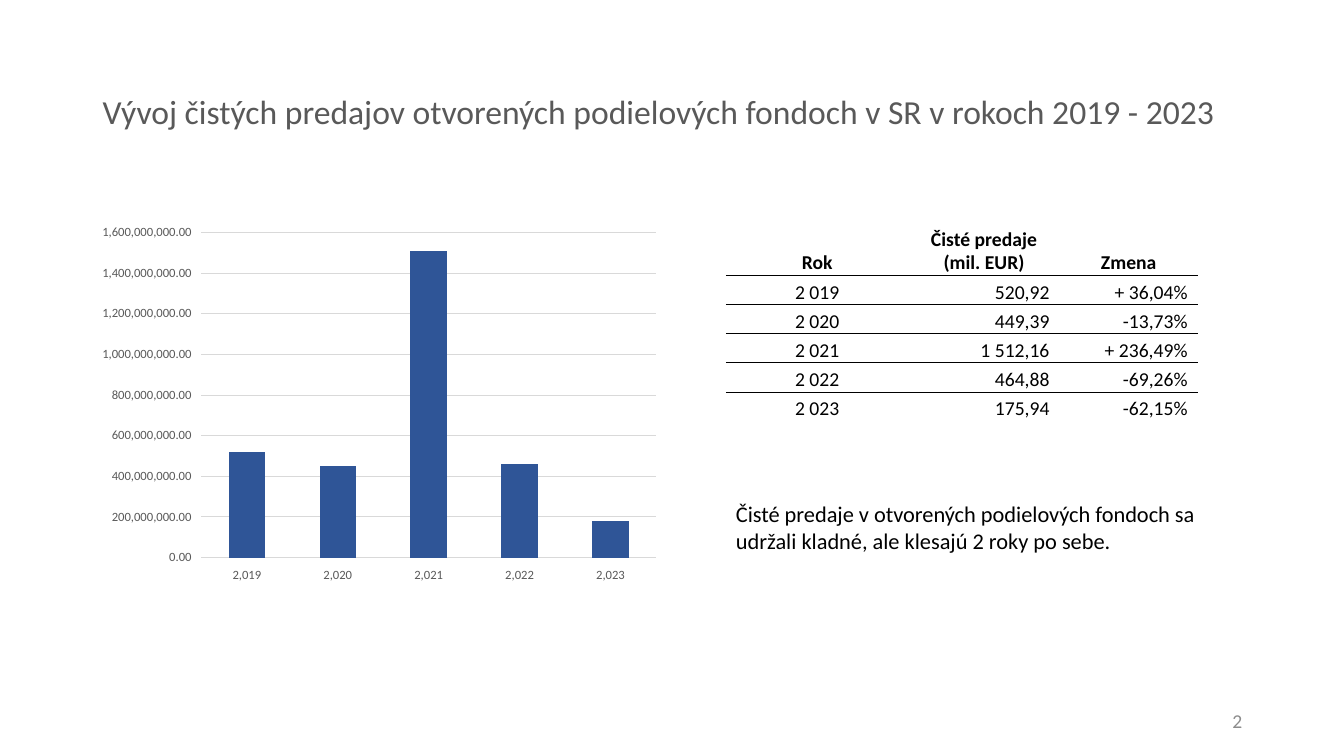
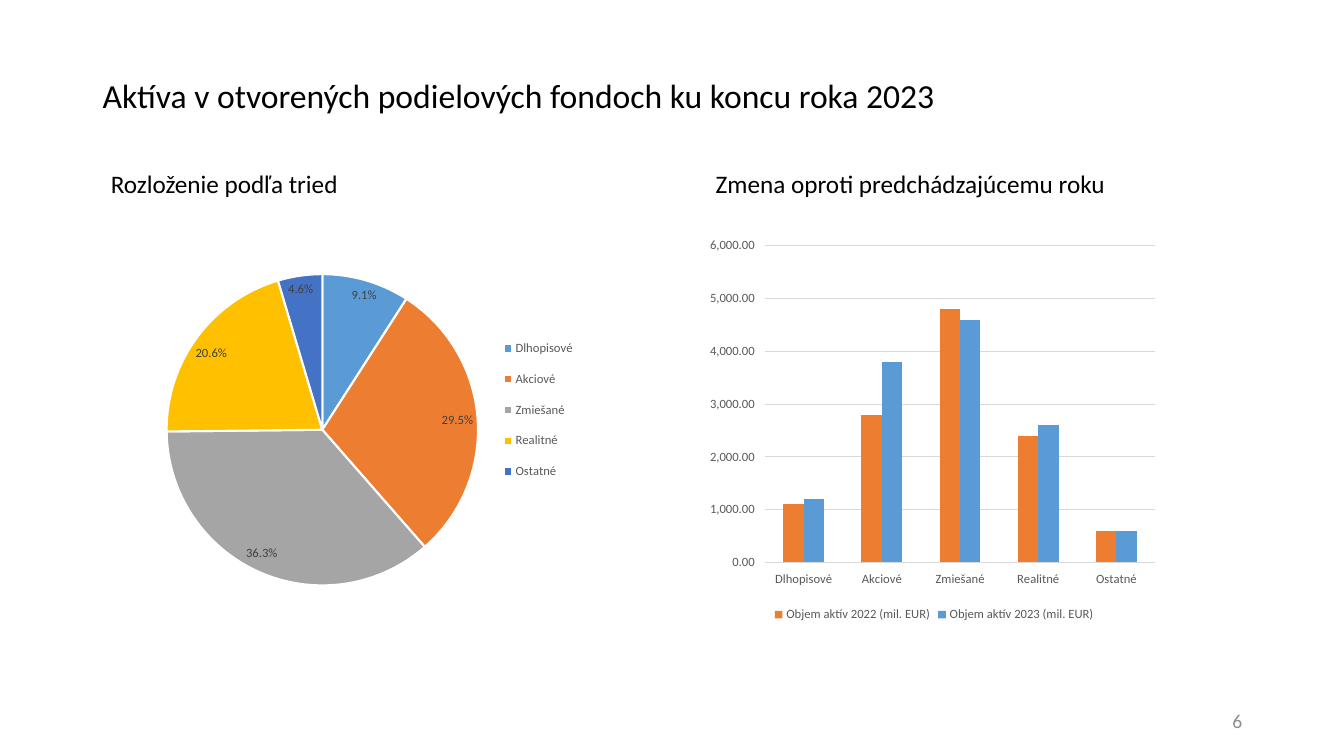
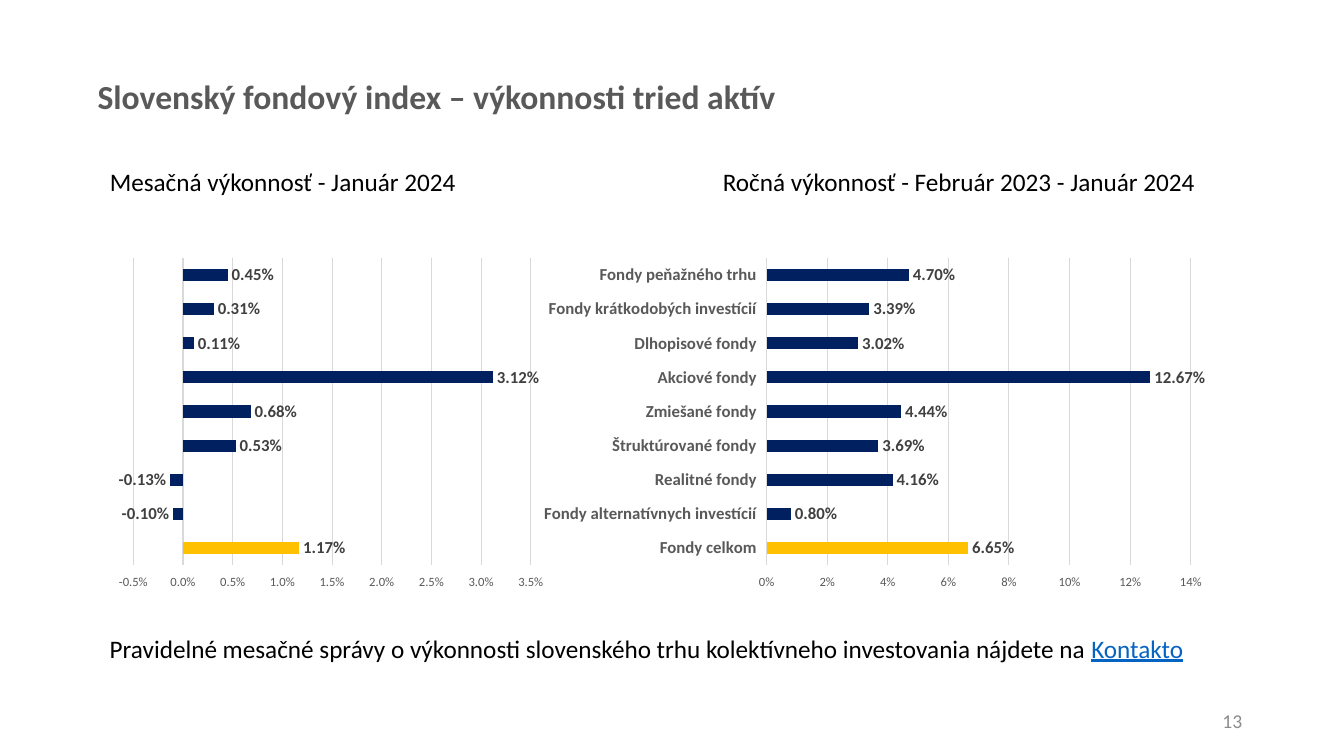
from pptx import Presentation
from pptx.chart.data import CategoryChartData
from pptx.dml.color import RGBColor
from pptx.enum.chart import (XL_CHART_TYPE, XL_LABEL_POSITION, XL_LEGEND_POSITION,
                             XL_TICK_LABEL_POSITION, XL_TICK_MARK)
from pptx.enum.text import MSO_ANCHOR, PP_ALIGN
from pptx.oxml import parse_xml
from pptx.oxml.ns import nsdecls, qn
from pptx.util import Inches, Pt

COLUMN, BAR, PIE = (XL_CHART_TYPE.COLUMN_CLUSTERED, XL_CHART_TYPE.BAR_CLUSTERED,
                    XL_CHART_TYPE.PIE)
OUT_END, BEST_FIT = XL_LABEL_POSITION.OUTSIDE_END, XL_LABEL_POSITION.BEST_FIT
LEGEND_BOTTOM, LEGEND_RIGHT = XL_LEGEND_POSITION.BOTTOM, XL_LEGEND_POSITION.RIGHT
LOW, NO_TICK = XL_TICK_LABEL_POSITION.LOW, XL_TICK_MARK.NONE
LEFT, CENTER, RIGHT = PP_ALIGN.LEFT, PP_ALIGN.CENTER, PP_ALIGN.RIGHT
TOP, MIDDLE, BOTTOM = MSO_ANCHOR.TOP, MSO_ANCHOR.MIDDLE, MSO_ANCHOR.BOTTOM

# Shared look
FONT = "Calibri"
COLORS = {
    "black": "000000", "white": "FFFFFF", "title": "595959", "axis": "595959",
    "label": "404040", "number": "8C8C8C", "grid": "D9D9D9", "link": "0563C1",
    "navy": "002060", "blue": "2F5597", "sky": "5B9BD5", "orange": "ED7D31",
    "gray": "A5A5A5", "gold": "FFC000", "royal": "4472C4",
}
TITLE = {"size": 24, "color": "title"}
HEADING = {"size": 18}
NO_STYLE = "{2D5ABB26-0587-4C30-8999-92F81FD0307C}"

# Content
CLASSES = ["Dlhopisové", "Akciové", "Zmiešané", "Realitné", "Ostatné"]
FUNDS = ["Fondy celkom", "Fondy alternatívnych investícií", "Realitné fondy",
         "Štruktúrované fondy", "Zmiešané fondy", "Akciové fondy", "Dlhopisové fondy",
         "Fondy krátkodobých investícií", "Fondy peňažného trhu"]
SALES_TABLE = {
    "at": (7.2, 2.16), "cols": [1.81, 1.5, 1.37], "head": 0.57, "row": 0.29,
    "rows": [("Rok", "Čisté predaje\n(mil. EUR)", "Zmena"),
             ("2 019", "520,92", "+ 36,04%"),
             ("2 020", "449,39", "-13,73%"),
             ("2 021", "1 512,16", "+ 236,49%"),
             ("2 022", "464,88", "-69,26%"),
             ("2 023", "175,94", "-62,15%")],
}
FUND_LABELS = {"pos": OUT_END, "fmt": "0.00%", "font": {"size": 12, "color": "label", "bold": True}}
FUND_BARS = {"type": BAR, "cats": FUNDS, "gap": 182, "points": ["gold"], "labels": FUND_LABELS}

SLIDES = [
    {"number": "2",
     "title": ("Vývoj čistých predajov otvorených podielových fondoch v SR v rokoch 2019 - 2023",
               (0.92, 0.4, 11.94, 1.45), TITLE),
     "texts": [([("Čisté predaje v otvorených podielových fondoch sa udržali kladné, "
                  "ale klesajú 2 roky po sebe.", {"size": 16})], (7.2, 4.91, 4.89, 0.64))],
     "table": SALES_TABLE,
     "charts": [
         {"type": COLUMN, "at": (0.9, 2.16, 5.72, 3.69), "gap": 150,
          "cats": ["2,019", "2,020", "2,021", "2,022", "2,023"],
          "series": [("Čisté predaje", "blue", [520e6, 450e6, 1510e6, 460e6, 180e6])],
          "scale": (0, 1.6e9, 2e8), "fmt": "#,##0.00"}]},
    {"number": "6",
     "title": ("Aktíva v otvorených podielových fondoch ku koncu roka 2023",
               (0.92, 0.4, 11.5, 1.14), {**TITLE, "color": "black"}),
     "texts": [([("Rozloženie podľa tried", HEADING)], (1, 1.62, 2.81, 0.4)),
               ([("Zmena oproti predchádzajúcemu roku", HEADING)], (7, 1.62, 4.54, 0.4))],
     "charts": [
         {"type": PIE, "at": (1.33, 2.28, 4.61, 3.93), "cats": CLASSES,
          "series": [("Podiel", "sky", [9.1, 29.5, 36.3, 20.6, 4.6])],
          "points": ["sky", "orange", "gray", "gold", "royal"],
          "labels": {"pos": BEST_FIT, "fmt": "0.0%", "font": {"size": 9, "color": "label"}},
          "plot": (0.07, 0.08, 0.67, 0.85),
          "legend": LEGEND_RIGHT, "legend_at": (0.77, 0.24, 0.2, 0.43)},
         {"type": COLUMN, "at": (6.93, 2.28, 4.67, 3.93), "cats": CLASSES, "gap": 182,
          "series": [("Objem aktív 2022 (mil. EUR)", "orange", [1100, 2800, 4800, 2400, 600]),
                     ("Objem aktív 2023 (mil. EUR)", "sky", [1200, 3800, 4600, 2600, 600])],
          "scale": (0, 6000, 1000), "fmt": "#,##0.00", "cat_line": True,
          "plot": (0.14, 0.04, 0.83, 0.8), "legend": LEGEND_BOTTOM}]},
    {"number": "13",
     "title": ("Slovenský fondový index – výkonnosti tried aktív",
               (0.87, 0.25, 11.94, 1.45), {**TITLE, "bold": True}),
     "texts": [([("Mesačná výkonnosť - Január 2024", HEADING)], (0.99, 1.6, 3.91, 0.4)),
               ([("Ročná výkonnosť - Február 2023 - Január 2024", HEADING)],
                (7.07, 1.6, 5.35, 0.4)),
               ([("Pravidelné mesačné správy o výkonnosti slovenského trhu kolektívneho "
                  "investovania nájdete na ", HEADING),
                 ("Kontakto", {**HEADING, "color": "link", "underline": True})],
                (0.99, 6.23, 12, 0.4))],
     "charts": [
         {**FUND_BARS, "at": (0.99, 2.25, 4.75, 3.86), "plot": (0.07, 0.08, 0.83, 0.79),
          "series": [("Mesačná výkonnosť", "navy", [0.0117, -0.001, -0.0013, 0.0053, 0.0068,
                                                    0.0312, 0.0011, 0.0031, 0.0045])],
          "scale": (-0.005, 0.035, 0.005), "fmt": "0.0%", "hide_cats": True},
         {**FUND_BARS, "at": (4.62, 2.25, 7.65, 3.86), "plot": (0.39, 0.08, 0.55, 0.79),
          "series": [("Ročná výkonnosť", "navy", [0.0665, 0.008, 0.0416, 0.0369, 0.0444,
                                                  0.1267, 0.0302, 0.0339, 0.047])],
          "scale": (0, 0.14, 0.02), "fmt": "0%", "cat_line": True,
          "cat_font": {"size": 12, "color": "axis", "bold": True}}]},
]


def rgb(name):
    return RGBColor.from_string(COLORS[name])


def set_font(font, size, color="black", **flags):
    font.color.rgb = rgb(color)
    for key, value in {"name": FONT, "size": Pt(size), "bold": False, **flags}.items():
        setattr(font, key, value)


def add_text(s, runs, at, align=LEFT, anchor=TOP, spacing=None):
    tf = s.shapes.add_textbox(*map(Inches, at)).text_frame
    tf.word_wrap = True
    tf.vertical_anchor = anchor
    p = tf.paragraphs[0]
    p.alignment = align
    p.line_spacing = spacing
    for text, style in runs:
        r = p.add_run()
        r.text = text
        set_font(r.font, **style)


def add_table(s, spec_table):
    rows, cols = spec_table["rows"], spec_table["cols"]
    heights = [spec_table["head"]] + [spec_table["row"]] * (len(rows) - 1)
    size = (sum(cols), sum(heights))
    table = s.shapes.add_table(len(rows), len(cols),
                               *map(Inches, spec_table["at"] + size)).table
    table.first_row = table.horz_banding = False
    table._tbl.tblPr.find(qn("a:tableStyleId")).text = NO_STYLE
    for column, width in zip(table.columns, cols):
        column.width = Inches(width)
    for i, (values, height) in enumerate(zip(rows, heights)):
        table.rows[i].height = Inches(height)
        for j, value in enumerate(values):
            cell = table.cell(i, j)
            number = i > 0 and j > 0
            cell.margin_left = cell.margin_top = cell.margin_bottom = 0
            cell.margin_right = Inches(0.1 if number else 0)
            cell.vertical_anchor = BOTTOM
            cell.text = value
            for p in cell.text_frame.paragraphs:
                p.alignment = RIGHT if number else CENTER
                set_font(p.runs[0].font, 14, bold=i == 0)
            # Rule under every row but the last
            if i < len(rows) - 1:
                cell._tc.get_or_add_tcPr().append(parse_xml(
                    f'<a:lnB {nsdecls("a")} w="6350"><a:solidFill>'
                    f'<a:srgbClr val="{COLORS["black"]}"/></a:solidFill></a:lnB>'))
            cell.fill.background()


def set_layout(parent, index, box, inner=False):
    for old in parent.findall(qn("c:layout")):
        parent.remove(old)
    parts = '<c:layoutTarget val="inner"/>' if inner else ""
    parts += '<c:xMode val="edge"/><c:yMode val="edge"/>'
    parts += "".join(f'<c:{key} val="{value}"/>' for key, value in zip("xywh", box))
    parent.insert(index, parse_xml(
        f'<c:layout {nsdecls("c")}><c:manualLayout>{parts}</c:manualLayout></c:layout>'))


def style_line(line, color=None):
    if color:
        line.color.rgb = rgb(color)
        line.width = Pt(0.75)
    else:
        line.fill.background()


def style_axes(chart, c):
    cat, val = chart.category_axis, chart.value_axis
    for axis in (cat, val):
        axis.major_tick_mark = axis.minor_tick_mark = NO_TICK
        set_font(axis.tick_labels.font, 9, "axis")
    if "cat_font" in c:
        set_font(cat.tick_labels.font, **c["cat_font"])
    cat.has_major_gridlines = False
    cat.tick_label_position = LOW
    cat.visible = not c.get("hide_cats", False)
    style_line(cat.format.line, "grid" if c.get("cat_line") else None)
    val.has_major_gridlines = True
    val.tick_label_position = LOW
    val.minimum_scale, val.maximum_scale, val.major_unit = c["scale"]
    val.tick_labels.number_format = c["fmt"]
    val.tick_labels.number_format_is_linked = False
    style_line(val.format.line)
    style_line(val.major_gridlines.format.line, "grid")


def add_chart(s, c):
    data = CategoryChartData()
    data.categories = c["cats"]
    for name, _, values in c["series"]:
        data.add_series(name, values)
    chart = s.shapes.add_chart(c["type"], *map(Inches, c["at"]), data).chart
    set_font(chart.font, 10)
    chart.has_title = False
    plot = chart.plots[0]
    pie = c["type"] == PIE
    plot.vary_by_categories = pie
    if not pie:
        plot.gap_width = c["gap"]
        style_axes(chart, c)

    # Series and single-point colours
    for series, (_, color, _) in zip(plot.series, c["series"]):
        series.format.fill.solid()
        series.format.fill.fore_color.rgb = rgb(color)
        if not pie:
            series.invert_if_negative = False
        for i, point_color in enumerate(c.get("points", [])):
            fmt = series.points[i].format
            fmt.fill.solid()
            fmt.fill.fore_color.rgb = rgb(point_color)
            if pie:
                fmt.line.color.rgb = rgb("white")
                fmt.line.width = Pt(1.5)

    # Labels, legend and plot area
    if "labels" in c:
        labels = plot.series[0].data_labels
        labels.show_percentage, labels.show_value = pie, not pie
        labels.number_format = c["labels"]["fmt"]
        labels.number_format_is_linked = False
        labels.position = c["labels"]["pos"]
        set_font(labels.font, **c["labels"]["font"])
    chart.has_legend = "legend" in c
    if chart.has_legend:
        legend = chart.legend
        legend.position = c["legend"]
        legend.include_in_layout = False
        set_font(legend.font, 9, "axis")
        if "legend_at" in c:
            set_layout(legend._element, 1, c["legend_at"])
    if "plot" in c:
        set_layout(chart._chartSpace.chart.plotArea, 0, c["plot"], inner=True)


def main():
    prs = Presentation()
    prs.slide_width, prs.slide_height = Inches(13.33), Inches(7.5)
    for content in SLIDES:
        s = prs.slides.add_slide(prs.slide_layouts[6])
        title, at, style = content["title"]
        add_text(s, [(title, style)], at, anchor=MIDDLE, spacing=0.9)
        add_text(s, [(content["number"], {"size": 14, "color": "number"})],
                 (9.42, 6.95, 3, 0.4), RIGHT, MIDDLE)
        for c in content["charts"]:
            add_chart(s, c)
        if "table" in content:
            add_table(s, content["table"])
        for runs, box in content["texts"]:
            add_text(s, runs, box)
    prs.save("out.pptx")


if __name__ == "__main__":
    main()
